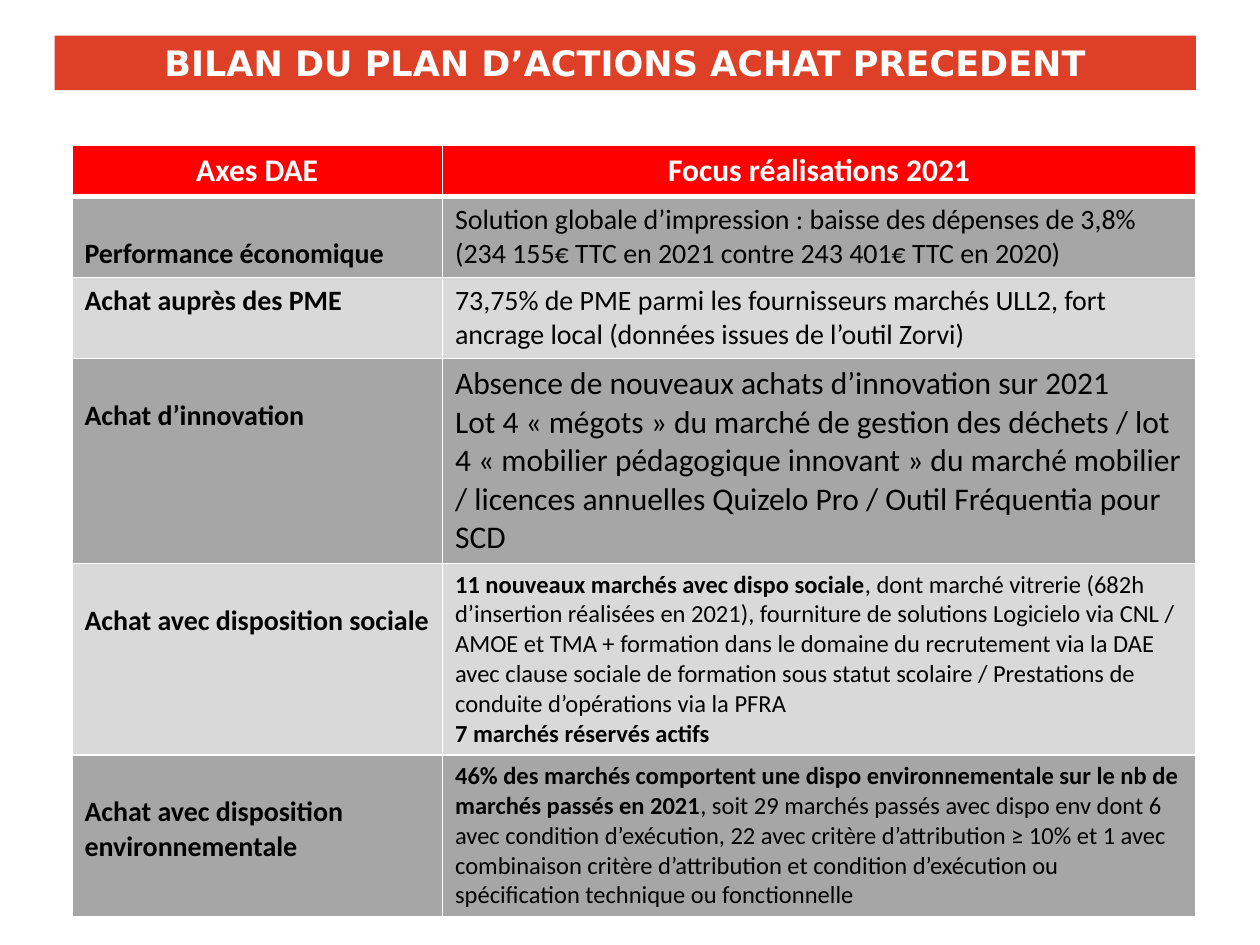
import pptx
import pptx.util
import pptx.dml.color
import pptx.enum.shapes
import pptx.enum.text
import pptx.oxml
import pptx.oxml.ns

Cm = pptx.util.Cm
Pt = pptx.util.Pt
ALIGN = pptx.enum.text.PP_ALIGN

COLORS = {
    "banner": "DD4026",
    "header": "FF0000",
    "dark": "A6A6A6",
    "light": "D9D9D9",
    "white": "FFFFFF",
    "black": "000000",
}

TITLE = "BILAN DU PLAN D’ACTIONS ACHAT PRECEDENT"
HEADERS = ["Axes DAE", "Focus réalisations 2021"]
COL_WIDTHS = [7.47, 15.19]
HEADER_HEIGHT = 0.99
LABEL_SIZE = 16
LABEL_DROP = 0.81

AXES = [
    ("Performance économique", True, 1.62, 16, [
        [("Solution globale d’impression : baisse des dépenses de 3,8% "
          "(234 155€ TTC en 2021 contre 243 401€ TTC en 2020)", False)],
    ]),
    ("Achat auprès des PME", False, 1.62, 16, [
        [("73,75% de PME parmi les fournisseurs marchés ULL2, fort "
          "ancrage local (données issues de l’outil Zorvi)", False)],
    ]),
    ("Achat d’innovation", True, 4.07, 18, [
        [("Absence de nouveaux achats d’innovation sur 2021", False)],
        [("Lot 4 « mégots » du marché de gestion des déchets / lot "
          "4 « mobilier pédagogique innovant » du marché mobilier "
          "/ licences annuelles Quizelo Pro / Outil Fréquentia pour SCD", False)],
    ]),
    ("Achat avec disposition sociale", True, 3.81, 14, [
        [("11 nouveaux marchés avec dispo sociale", True),
         (", dont marché vitrerie (682h d’insertion réalisées en 2021), "
          "fourniture de solutions Logicielo via CNL / AMOE et TMA + formation "
          "dans le domaine du recrutement via la DAE avec clause sociale de "
          "formation sous statut scolaire / Prestations de conduite "
          "d’opérations via la PFRA", False)],
        [("7 marchés réservés actifs", True)],
    ]),
    ("Achat avec disposition environnementale", True, 3.2, 14, [
        [("46% des marchés comportent une dispo environnementale sur le nb de "
          "marchés passés en 2021", True),
         (", soit 29 marchés passés avec dispo env dont 6 avec condition "
          "d’exécution, 22 avec critère d’attribution ≥ 10% et 1 avec "
          "combinaison critère d’attribution et condition d’exécution ou "
          "spécification technique ou fonctionnelle", False)],
    ]),
]


def rgb(name):
    return pptx.dml.color.RGBColor.from_string(COLORS[name])


def add_run(p, text, size, color, bold, font="Calibri"):
    r = p.add_run()
    r.text = text
    r.font.name = font
    r.font.size = Pt(size)
    r.font.bold = bold
    r.font.color.rgb = rgb(color)


def set_borders(cell, bottom):
    tcPr = cell._tc.get_or_add_tcPr()
    widths = {"lnL": 1, "lnR": 1, "lnT": 1, "lnB": bottom}
    for i, (tag, width) in enumerate(widths.items()):
        tcPr.insert(i, pptx.oxml.parse_xml(
            f'<a:{tag} {pptx.oxml.ns.nsdecls("a")} w="{Pt(width)}">'
            f'<a:solidFill><a:srgbClr val="{COLORS["white"]}"/></a:solidFill>'
            f'</a:{tag}>'))


def fill_cell(cell, paragraphs, size, fill, color="black", align=ALIGN.LEFT, bottom=1):
    cell.fill.solid()
    cell.fill.fore_color.rgb = rgb(fill)
    set_borders(cell, bottom)
    tf = cell.text_frame
    for i, runs in enumerate(paragraphs):
        p = tf.add_paragraph() if i else tf.paragraphs[0]
        p.alignment = align
        for text, bold in runs:
            add_run(p, text, size, color, bold)


def add_banner(s, left, top, width, height):
    sp = s.shapes.add_shape(pptx.enum.shapes.MSO_SHAPE.RECTANGLE, left, top, width, height)
    sp.shadow.inherit = False
    sp.fill.solid()
    sp.fill.fore_color.rgb = rgb("banner")
    sp.line.fill.background()
    tf = sp.text_frame
    tf.word_wrap = True
    tf.vertical_anchor = pptx.enum.text.MSO_ANCHOR.MIDDLE
    p = tf.paragraphs[0]
    p.alignment = ALIGN.CENTER
    add_run(p, TITLE, 20, "white", True, "DejaVu Sans")


def add_axes_table(s, left, top, width, height):
    table = s.shapes.add_table(len(AXES) + 1, len(HEADERS), left, top, width, height).table
    for col, col_width in zip(table.columns, COL_WIDTHS):
        col.width = Cm(col_width)
    table.rows[0].height = Cm(HEADER_HEIGHT)
    for c, text in enumerate(HEADERS):
        fill_cell(table.cell(0, c), [[(text, True)]], 18, "header", "white", ALIGN.CENTER, 3)
    for i, (label, dropped, row_height, size, paragraphs) in enumerate(AXES, 1):
        table.rows[i].height = Cm(row_height)
        fill = "dark" if i % 2 else "light"
        label_cell = table.cell(i, 0)
        fill_cell(label_cell, [[(label, True)]], LABEL_SIZE, fill)
        if dropped:
            label_cell.margin_top = Cm(LABEL_DROP)
        fill_cell(table.cell(i, 1), paragraphs, size, fill)


def main():
    prs = pptx.Presentation()
    prs.slide_width, prs.slide_height = Cm(25.4), Cm(19.05)
    s = prs.slides.add_slide(prs.slide_layouts[6])
    add_banner(s, Cm(1.1), Cm(0.72), Cm(23.01), Cm(1.1))
    table_height = HEADER_HEIGHT + sum(axis[2] for axis in AXES)
    add_axes_table(s, Cm(1.45), Cm(2.93), Cm(sum(COL_WIDTHS)), Cm(table_height))
    prs.save("out.pptx")


if __name__ == "__main__":
    main()
